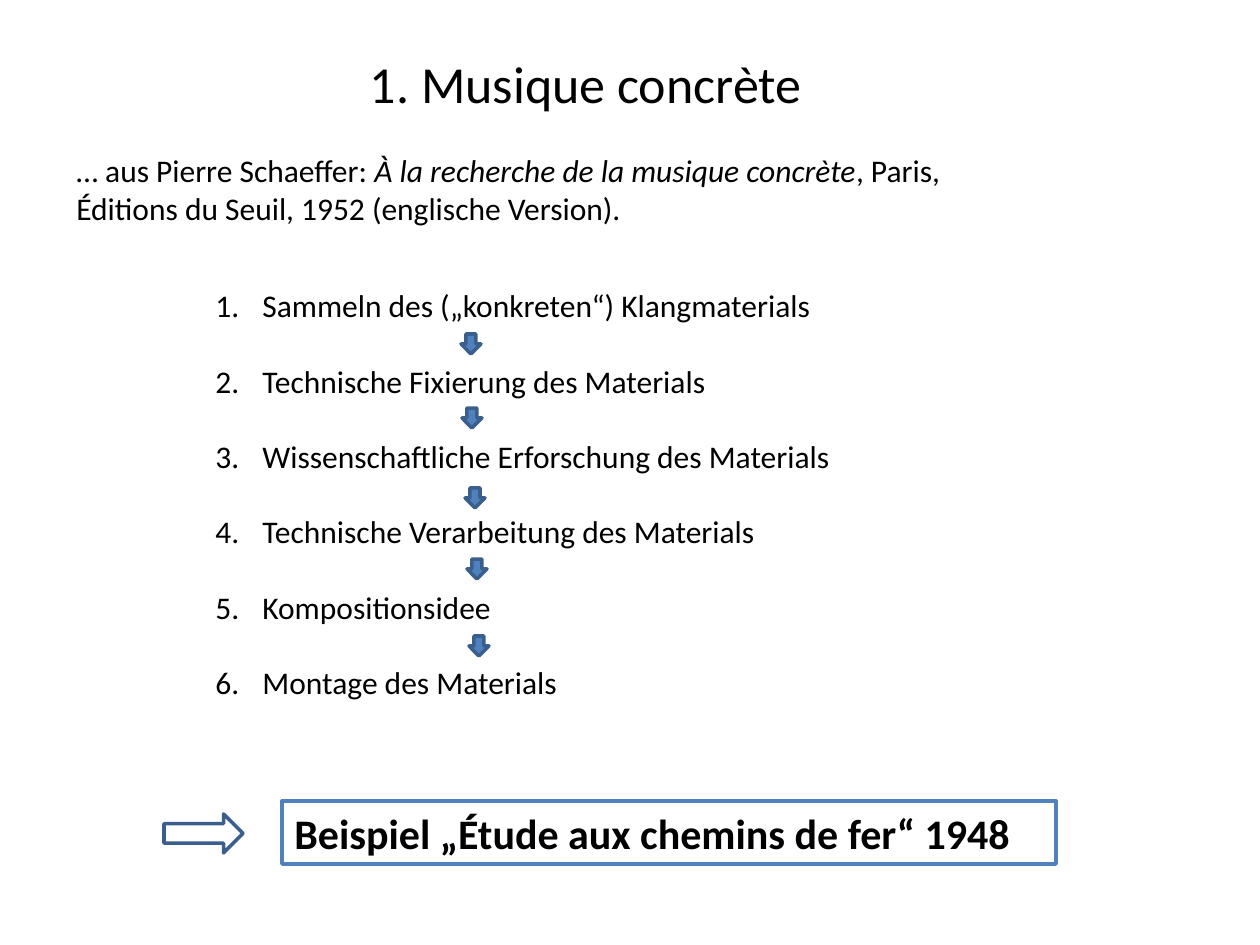
from pptx import Presentation
from pptx import util as u
from pptx.dml.color import RGBColor
from pptx.enum import shapes, text
from pptx.oxml.ns import qn
from lxml import etree

PX = u.Inches(1) / 126
FONT = "Calibri"
COLORS = {"text": "000000", "blue": "4F81BD", "edge": "3A5F8C", "white": "FFFFFF"}


def px(*lengths):
    return [u.Emu(round(n * PX)) for n in lengths]


def rgb(name):
    return RGBColor.from_string(COLORS[name])


def add_text(p, words, size=18, bold=False, italic=False, color="text"):
    r = p.add_run()
    r.text = words
    f = r.font
    f.name, f.size, f.bold, f.italic = FONT, u.Pt(size), bold, italic
    f.color.rgb = rgb(color)


def number(p, indent):
    """Turn a paragraph into an automatically numbered item with a hanging indent."""
    pPr = p._p.get_or_add_pPr()
    pPr.set("marL", str(indent))
    pPr.set("indent", str(-indent))
    etree.SubElement(pPr, qn("a:buFont"), typeface="+mj-lt")
    etree.SubElement(pPr, qn("a:buAutoNum"), type="arabicPeriod")


class Slide:
    def __init__(self, prs):
        self.s = prs.slides.add_slide(prs.slide_layouts[5])

    def title(self, words, box, size):
        sp = self.s.shapes.title
        sp.left, sp.top, sp.width, sp.height = px(*box)
        tf = sp.text_frame
        tf.auto_size = text.MSO_AUTO_SIZE.NONE
        tf.vertical_anchor = text.MSO_ANCHOR.TOP
        p = tf.paragraphs[0]
        p.alignment = text.PP_ALIGN.CENTER
        add_text(p, words, size=size)

    def text_box(self, box):
        tf = self.s.shapes.add_textbox(*px(*box)).text_frame
        tf.word_wrap = True
        return tf

    def paragraph(self, runs, box):
        p = self.text_box(box).paragraphs[0]
        for words, style in runs:
            add_text(p, words, **style)

    def numbered_list(self, items, box, indent, gap):
        tf = self.text_box(box)
        for i, item in enumerate(items):
            p = tf.add_paragraph() if i else tf.paragraphs[0]
            number(p, px(indent)[0])
            if i:
                p.space_before = u.Pt(gap)
            add_text(p, item)

    def shape(self, kind, box, fill=None, line="edge", width=2):
        sp = self.s.shapes.add_shape(kind, *px(*box))
        sp.shadow.inherit = False
        if fill:
            sp.fill.solid()
            sp.fill.fore_color.rgb = rgb(fill)
        else:
            sp.fill.background()
        sp.line.color.rgb = rgb(line)
        sp.line.width = u.Pt(width)
        return sp

    def framed_text(self, words, box, size):
        sp = self.shape(shapes.MSO_SHAPE.RECTANGLE, box, line="blue", width=2.25)
        tf = sp.text_frame
        tf.word_wrap = True
        tf.vertical_anchor = text.MSO_ANCHOR.TOP
        p = tf.paragraphs[0]
        p.alignment = text.PP_ALIGN.LEFT
        add_text(p, words, size=size, bold=True)


def main():
    prs = Presentation()
    prs.slide_width, prs.slide_height = px(1260, 945)
    slide = Slide(prs)

    slide.title("1. Musique concrète", (263, 45, 646, 68), 29.7)
    slide.paragraph(
        [("… aus Pierre Schaeffer: ", {}),
         ("À la recherche de la musique concrète", {"italic": True}),
         (", Paris, Éditions du Seuil, 1952 (englische Version).", {})],
        (64, 145, 942, 89))

    slide.framed_text("Beispiel „Étude aux chemins de fer“ 1948", (282, 801, 774, 63), 24)
    slide.shape(shapes.MSO_SHAPE.RIGHT_ARROW, (164, 814, 79, 39), fill="white")

    steps = ["Sammeln des („konkreten“) Klangmaterials",
             "Technische Fixierung des Materials",
             "Wissenschaftliche Erforschung des Materials",
             "Technische Verarbeitung des Materials",
             "Kompositionsidee",
             "Montage des Materials"]
    slide.numbered_list(steps, (203, 280, 735, 432), indent=47, gap=21.5)

    for x, y in [(461, 334), (462, 408), (465, 488), (467, 559), (469, 636)]:
        slide.shape(shapes.MSO_SHAPE.DOWN_ARROW, (x, y, 20, 20), fill="blue")

    prs.save("out.pptx")


if __name__ == "__main__":
    main()
